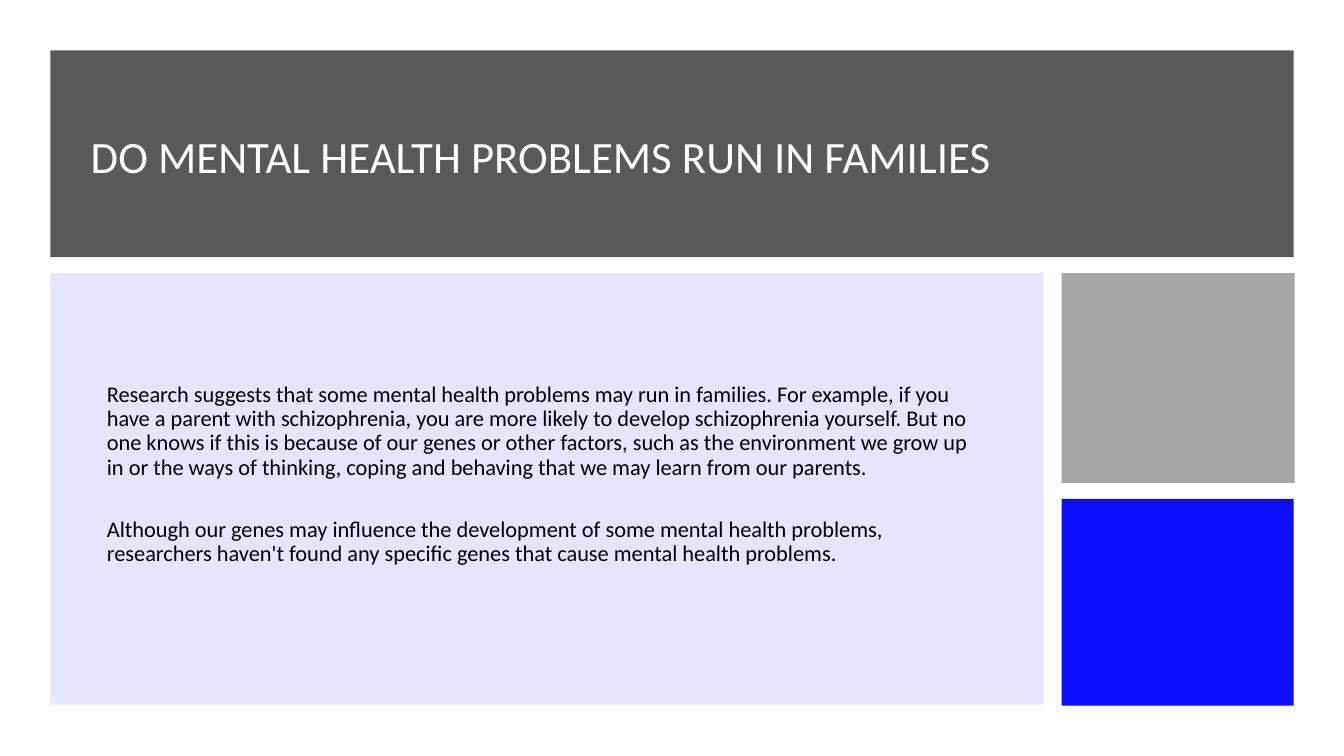
from lxml.etree import SubElement as Sub
from pptx import Presentation
from pptx.dml.color import RGBColor as RGB
from pptx.enum.shapes import MSO_SHAPE as Kind
from pptx.enum.text import MSO_ANCHOR as Anchor, MSO_AUTO_SIZE as Fit, PP_ALIGN as Align
from pptx.oxml.ns import qn
from pptx.util import Inches, Pt

theme = {
    "font": "Calibri",
    "head": 32,
    "text": 16,
    "white": "FFFFFF",
    "black": "000000",
    "dark": "595959",
    "pale": "8080FF",
    "gray": "A5A5A5",
    "blue": "0000FF",
}

deck = Presentation()
deck.slide_width = Inches(13.33)
deck.slide_height = Inches(7.5)
slide = deck.slides.add_slide(deck.slide_layouts[1])

panels = [
    ((0.5, 0.5, 12.33, 2.05), "dark", 100),
    ((0.5, 2.71, 9.85, 4.28), "pale", 20),
    ((10.53, 2.71, 2.31, 2.08), "gray", 100),
    ((10.53, 4.95, 2.3, 2.05), "blue", 95),
]
for box, tone, alpha in panels:
    panel = slide.shapes.add_shape(Kind.RECTANGLE, *map(Inches, box))
    panel.shadow.inherit = False
    panel.line.fill.background()
    panel.fill.solid()
    panel.fill.fore_color.rgb = RGB.from_string(theme[tone])
    if alpha < 100:
        color = panel.element.spPr.find(qn("a:solidFill"))[0]
        Sub(color, qn("a:alpha"), val=str(alpha * 1000))

title = ["DO MENTAL HEALTH PROBLEMS RUN IN FAMILIES"]
body = [
    "Research suggests that some mental health problems may run in families. "
    "For example, if you have a parent with schizophrenia, you are more likely "
    "to develop schizophrenia yourself. But no one knows if this is because of "
    "our genes or other factors, such as the environment we grow up in or the "
    "ways of thinking, coping and behaving that we may learn from our parents.",
    "Although our genes may influence the development of some mental health "
    "problems, researchers haven't found any specific genes that cause mental "
    "health problems.",
]
texts = [
    (slide.shapes.title, (0.8, 0.8, 11.66, 1.56), title, "head", "white"),
    (slide.placeholders[1], (0.96, 3.06, 8.93, 3.3), body, "text", "black"),
]
for holder, box, lines, size, tone in texts:
    holder.left, holder.top, holder.width, holder.height = map(Inches, box)
    holder.element.getparent().append(holder.element)
    frame = holder.text_frame
    frame.word_wrap = True
    frame.auto_size = Fit.NONE
    frame.vertical_anchor = Anchor.MIDDLE
    for row, line in enumerate(lines):
        para = frame.add_paragraph() if row else frame.paragraphs[0]
        para.alignment = Align.LEFT
        para.line_spacing = 0.9
        para.space_before = Pt(27 if row else 0)
        props = para._p.get_or_add_pPr()
        props.set("marL", "0")
        props.set("indent", "0")
        Sub(props, qn("a:buNone"))
        run = para.add_run()
        run.text = line
        run.font.name = theme["font"]
        run.font.size = Pt(theme[size])
        run.font.color.rgb = RGB.from_string(theme[tone])

deck.save("out.pptx")
